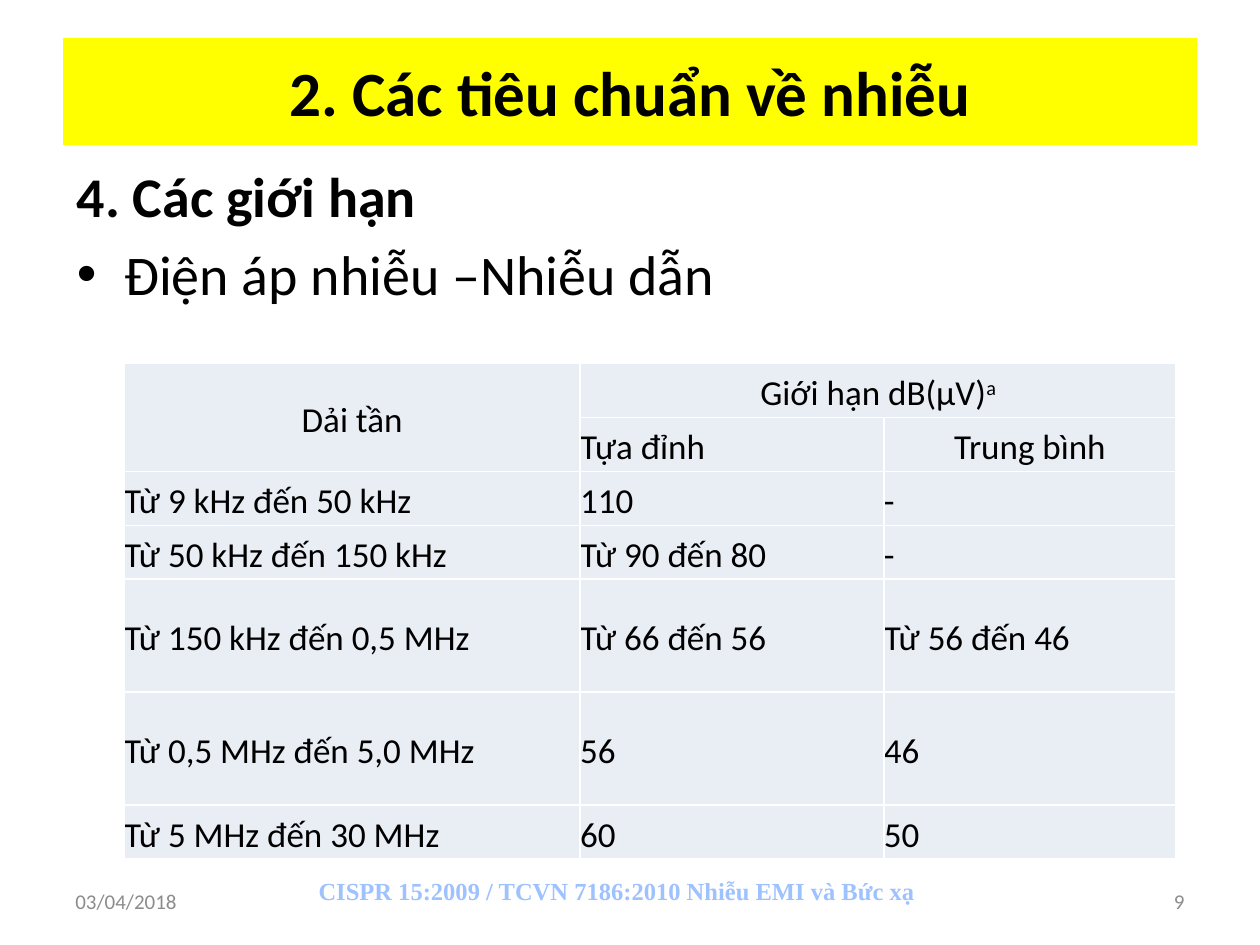
from dataclasses import dataclass

from lxml.etree import SubElement
from pptx import Presentation
from pptx.dml.color import RGBColor
from pptx.enum.text import MSO_ANCHOR, PP_ALIGN
from pptx.oxml.ns import qn
from pptx.util import Inches, Pt


@dataclass(frozen=True)
class Theme:
    sans: str = "Calibri"
    serif: str = "Times New Roman"
    ink: str = "000000"
    band: str = "FFFF00"
    cell: str = "E9EDF4"
    rule: str = "FFFFFF"
    gray: str = "8C8C8C"
    blue: str = "9EC1FF"
    head: int = 36
    body: int = 32
    grid: int = 20
    note: int = 14
    foot: int = 12


LEFT, MID, RIGHT = PP_ALIGN.LEFT, PP_ALIGN.CENTER, PP_ALIGN.RIGHT


def write(para, text, size, font=Theme.sans, color=Theme.ink, bold=False, align=None, base=0):
    run = para.add_run()
    run.text = text
    run.font.name, run.font.size, run.font.bold = font, Pt(size), bold
    run.font.color.rgb = RGBColor.from_string(color)
    if align is not None:
        para.alignment = align
    if base:
        run.font._element.set("baseline", str(base * 1000))


def indent(para, left, first):
    props = para._p.get_or_add_pPr()
    props.set("marL", str(Inches(left)))
    props.set("indent", str(Inches(first)))
    return props


class Deck:
    """Draws styled parts on one slide, placed on a grid of 100 columns by 75 rows."""

    def __init__(self, theme):
        self.theme = theme
        self.show = Presentation()
        self.show.slide_width, self.show.slide_height = Inches(10), Inches(7.5)
        self.slide = self.show.slides.add_slide(self.show.slide_layouts[1])

    def span(self, col, row, wide, high):
        across, down = self.show.slide_width / 100, self.show.slide_height / 75
        return [round(n) for n in (col * across, row * down, wide * across, high * down)]

    def place(self, shape, *area):
        shape.left, shape.top, shape.width, shape.height = self.span(*area)

    def title(self, text, *area):
        shape = self.slide.shapes.title
        self.place(shape, *area)
        shape.fill.solid()
        shape.fill.fore_color.rgb = RGBColor.from_string(self.theme.band)
        frame = shape.text_frame
        frame.vertical_anchor = MSO_ANCHOR.MIDDLE
        write(frame.paragraphs[0], text, self.theme.head, bold=True, align=MID)

    def body(self, lead, points, *area):
        shape = self.slide.placeholders[1]
        self.place(shape, *area)
        first = shape.text_frame.paragraphs[0]
        SubElement(indent(first, 0, 0), qn("a:buNone"))
        write(first, lead, self.theme.body, bold=True)
        for point in points:
            write(shape.text_frame.add_paragraph(), point, self.theme.body)

    def label(self, text, *area, first=0, before=0, anchor=MSO_ANCHOR.MIDDLE, **style):
        frame = self.slide.shapes.add_textbox(*self.span(*area)).text_frame
        frame.word_wrap = True
        frame.vertical_anchor = anchor
        para = frame.paragraphs[0]
        para.space_before = Pt(before)
        indent(para, 0, first)
        write(para, text, **style)

    def frame(self, cell):
        props = cell._tc.get_or_add_tcPr()
        for at, side in enumerate(("lnL", "lnR", "lnT", "lnB")):
            line = props.makeelement(qn(f"a:{side}"), {"w": str(Pt(1))})
            props.insert(at, line)
            SubElement(SubElement(line, qn("a:solidFill")), qn("a:srgbClr"), val=self.theme.rule)

    def fill(self, cell, text, align):
        cell.margin_left = cell.margin_right = cell.margin_top = cell.margin_bottom = 0
        cell.vertical_anchor = MSO_ANCHOR.MIDDLE
        cell.fill.solid()
        cell.fill.fore_color.rgb = RGBColor.from_string(self.theme.cell)
        self.frame(cell)
        para = cell.text_frame.paragraphs[0]
        para.line_spacing = 1.15
        para.space_before = para.space_after = Pt(12)
        main, mark, raised = text.partition("^")
        if main:
            write(para, main, self.theme.grid, align=align)
        if mark:
            write(para, raised, self.theme.grid, base=30)

    def table(self, data, wides, highs, col, row, merges, mids):
        area = self.span(col, row, sum(wides), sum(highs))
        table = self.slide.shapes.add_table(len(highs), len(wides), *area).table
        table.first_row = table.horz_banding = False
        for part, wide in zip(table.columns, wides):
            part.width = self.span(0, 0, wide, 0)[2]
        for part, high in zip(table.rows, highs):
            part.height = self.span(0, 0, 0, high)[3]
        for start, end in merges:
            table.cell(*start).merge(table.cell(*end))
        for r, line in enumerate(data):
            for c, text in enumerate(line):
                self.fill(table.cell(r, c), text, MID if (r, c) in mids else LEFT)


def main():
    theme = Theme()
    deck = Deck(theme)
    deck.title("2. Các tiêu chuẩn về nhiễu", 5, 3, 90, 8.5)
    deck.body("4. Các giới hạn", ["Điện áp nhiễu –Nhiễu dẫn"], 5.1, 12.3, 90, 14.2)
    limits = [
        ("Dải tần", "Giới hạn dB(μV)^a", ""),
        ("", "Tựa đỉnh", "Trung bình"),
        ("Từ 9 kHz đến 50 kHz", "110", "-"),
        ("Từ 50 kHz đến 150 kHz", "Từ 90 đến 80", "-"),
        ("Từ 150 kHz đến 0,5 MHz", "Từ 66 đến 56", "Từ 56 đến 46"),
        ("Từ 0,5 MHz đến 5,0 MHz", "56", "46"),
        ("Từ 5 MHz đến 30 MHz", "60", "50"),
    ]
    short, tall = 4.28, 8.97
    deck.table(
        limits,
        wides=[36.2, 24.1, 23.2],
        highs=[short] * 4 + [tall] * 2 + [short],
        col=9.85,
        row=28.85,
        merges=[((0, 0), (1, 0)), ((0, 1), (0, 2))],
        mids={(0, 0), (0, 1), (1, 2)},
    )
    deck.label(
        "CISPR 15:2009 / TCVN 7186:2010 Nhiễu EMI và Bức xạ", 19.3, 69, 54.4, 4.4,
        first=0.5, before=6, anchor=MSO_ANCHOR.TOP,
        size=theme.note, font=theme.serif, color=theme.blue, bold=True,
    )
    for text, col, align in (("03/04/2018", 5, LEFT), ("9", 71.7, RIGHT)):
        deck.label(text, col, 69.5, 23.3, 4, size=theme.foot, color=theme.gray, align=align)
    deck.show.save("out.pptx")


if __name__ == "__main__":
    main()
